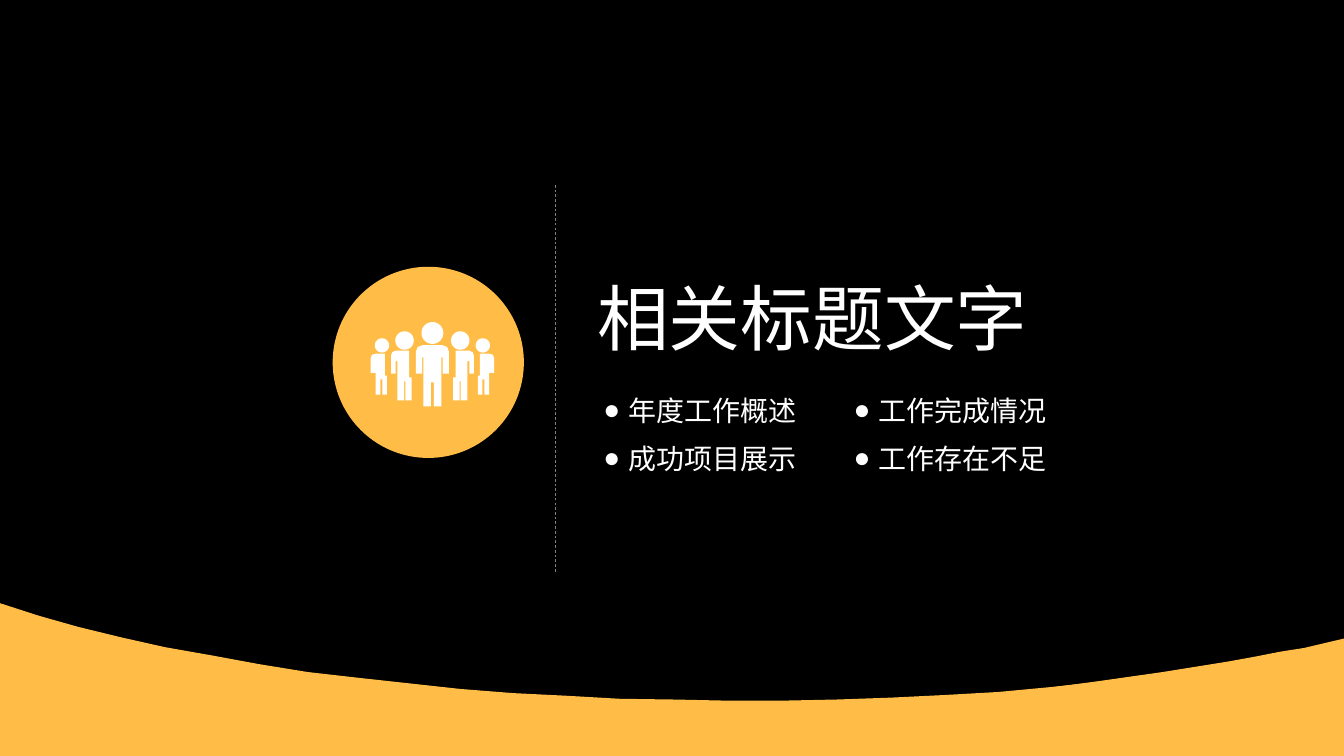
from dataclasses import dataclass
from math import cos, radians, sin

from lxml import etree
from pptx import Presentation
from pptx.dml.color import RGBColor
from pptx.enum.dml import MSO_LINE
from pptx.enum.shapes import MSO_CONNECTOR, MSO_SHAPE
from pptx.enum.text import MSO_AUTO_SIZE
from pptx.oxml.ns import qn
from pptx.util import Cm, Pt

OVAL = MSO_SHAPE.OVAL
STRAIGHT = MSO_CONNECTOR.STRAIGHT
DASH = MSO_LINE.DASH
FIT_SHAPE = MSO_AUTO_SIZE.SHAPE_TO_FIT_TEXT

BLACK, WHITE, AMBER, GRAY = "000000", "FFFFFF", "FFBD47", "808080"
FONT = "Arial"
SLIDE_W, SLIDE_H = 35.71, 20.09
AXIS = 11.49  # centre line of the people icon
Points = list[tuple[float, float]]


@dataclass
class Person:
    """Distances from the icon axis and heights on the slide, in cm."""
    head_x: float
    head_y: float
    head_d: float
    body: Points


@dataclass
class Label:
    text: str
    left: float
    top: float
    width: float
    height: float
    size: float
    bullet: bool = False


CHIEF_HALF = [(0.25, 9.17), (0.39, 9.22), (0.44, 9.35), (0.44, 9.93),
              (0.27, 9.93), (0.27, 9.5), (0.24, 9.5), (0.24, 10.8),
              (0.04, 10.8), (0.04, 10.16)]
CHIEF = Person(0, 8.85, 0.58, CHIEF_HALF + [(-x, y) for x, y in reversed(CHIEF_HALF)])
COLLEAGUES = [
    Person(0.74, 9.05, 0.49, [
        (0.62, 9.32), (0.98, 9.32), (1.07, 9.36), (1.1, 9.45), (1.1, 9.93),
        (0.98, 9.93), (0.98, 9.6), (0.93, 9.6), (0.93, 10.64), (0.75, 10.64),
        (0.75, 10.13), (0.72, 10.13), (0.72, 10.64), (0.55, 10.64),
        (0.55, 10.03), (0.62, 10.03)]),
    Person(1.34, 9.18, 0.38, [
        (1.26, 9.4), (1.51, 9.4), (1.61, 9.43), (1.64, 9.52), (1.64, 9.91),
        (1.51, 9.91), (1.51, 10.49), (1.38, 10.49), (1.38, 10.08),
        (1.33, 10.08), (1.33, 10.49), (1.21, 10.49), (1.21, 9.98),
        (1.26, 9.98)]),
]

# Upper edges of the two overlapping waves
WAVES = [
    [(0, 16.03), (1.02, 16.36), (2.08, 16.66), (3.23, 16.94), (4.39, 17.2),
     (5.64, 17.42), (6.88, 17.65), (8.18, 17.86), (9.5, 18.01), (10.87, 18.16),
     (12.24, 18.31), (13.64, 18.42), (15.04, 18.49), (16.46, 18.57),
     (17.91, 18.59), (19.33, 18.62), (20.78, 18.62), (22.23, 18.59),
     (23.67, 18.54), (25.1, 18.47), (26.52, 18.39), (27.91, 18.26),
     (29.29, 18.11), (30.63, 17.96), (31.95, 17.78), (33.25, 17.58),
     (34.52, 17.35), (SLIDE_W, 17.09)],
    [(0, 17.27), (1.4, 17.53), (2.84, 17.75), (4.27, 17.98), (5.72, 18.19),
     (7.16, 18.36), (8.64, 18.52), (10.13, 18.67), (11.61, 18.77),
     (13.11, 18.85), (14.63, 18.92), (16.15, 18.95), (17.7, 18.95),
     (19.28, 18.92), (20.85, 18.87), (22.45, 18.8), (24.1, 18.67),
     (25.76, 18.52), (27.43, 18.34), (29.13, 18.11), (30.89, 17.86),
     (32.64, 17.58), (33.35, 17.45), (34.01, 17.32), (34.65, 17.22),
     (35.2, 17.09), (SLIDE_W, 16.97)],
]

TOPICS = [["年度工作概述", "工作完成情况"], ["成功项目展示", "工作存在不足"]]
LABELS = [Label("相关标题文字", 15.62, 7.14, 12.07, 2.57, 54)] + [
    Label(text, 16.03 + 6.65 * col, 10.46 + 1.27 * row, 5.38, 0.89, 21.1, True)
    for row, texts in enumerate(TOPICS) for col, text in enumerate(texts)]


def rgb(value: str) -> RGBColor:
    return RGBColor.from_string(value)


def paint(sp, color: str) -> None:
    sp.shadow.inherit = False
    sp.fill.solid()
    sp.fill.fore_color.rgb = rgb(color)
    sp.line.fill.background()


def add_outlines(shapes, contours: list[Points], color: str) -> None:
    builder = None
    for points in contours:
        start, *rest = [(Cm(x), Cm(y)) for x, y in points]
        if builder is None:
            builder = shapes.build_freeform(*start)
        else:
            builder.move_to(*start)
        builder.add_line_segments(rest, close=True)
    paint(builder.convert_to_shape(), color)


def person_contours(person: Person, side: int) -> list[Points]:
    radius = person.head_d / 2
    head = [(person.head_x + radius * cos(radians(a)),
             person.head_y + radius * sin(radians(a))) for a in range(0, 360, 10)]
    return [[(AXIS + side * x, y) for x, y in part] for part in (head, person.body)]


def add_bullet(p) -> None:
    pPr = p._p.get_or_add_pPr()
    pPr.set("marL", str(Cm(0.66)))
    pPr.set("indent", str(-Cm(0.66)))
    etree.SubElement(pPr, qn("a:buFont")).set("typeface", FONT)
    etree.SubElement(pPr, qn("a:buChar")).set("char", "●")


def add_label(shapes, label: Label) -> None:
    tf = shapes.add_textbox(Cm(label.left), Cm(label.top),
                            Cm(label.width), Cm(label.height)).text_frame
    frame = {"word_wrap": label.bullet, "auto_size": FIT_SHAPE}
    if label.bullet:
        frame |= {f"margin_{edge}": 0 for edge in ("left", "top", "right", "bottom")}
    for name, value in frame.items():
        setattr(tf, name, value)
    p = tf.paragraphs[0]
    if label.bullet:
        add_bullet(p)
    r = p.add_run()
    r.text = label.text
    for name, value in {"name": FONT, "size": Pt(label.size)}.items():
        setattr(r.font, name, value)
    r.font.color.rgb = rgb(WHITE)


def add_divider(shapes) -> None:
    line = shapes.add_connector(STRAIGHT, Cm(14.76), Cm(15.19), Cm(14.76), Cm(4.88))
    etree.SubElement(line._element.spPr, qn("a:effectLst"))
    line.line.color.rgb = rgb(GRAY)
    for name, value in {"width": Pt(0.5), "dash_style": DASH}.items():
        setattr(line.line, name, value)


def main() -> None:
    prs = Presentation()
    prs.slide_width, prs.slide_height = Cm(SLIDE_W), Cm(SLIDE_H)
    s = prs.slides.add_slide(prs.slide_layouts[6])
    s.background.fill.solid()
    s.background.fill.fore_color.rgb = rgb(BLACK)

    # Title, topics and divider
    for label in LABELS:
        add_label(s.shapes, label)
    add_divider(s.shapes)

    # People icon
    icon = s.shapes.add_group_shape().shapes
    paint(icon.add_shape(OVAL, Cm(8.84), Cm(7.09), Cm(5.08), Cm(5.08)), AMBER)
    team = person_contours(CHIEF, 1)
    for person in COLLEAGUES:
        for side in (-1, 1):
            team += person_contours(person, side)
    add_outlines(icon, team, WHITE)

    # Waves along the bottom
    for edge in WAVES:
        add_outlines(s.shapes, [edge + [(SLIDE_W, SLIDE_H), (0, SLIDE_H)]], AMBER)

    prs.save("out.pptx")


if __name__ == "__main__":
    main()
